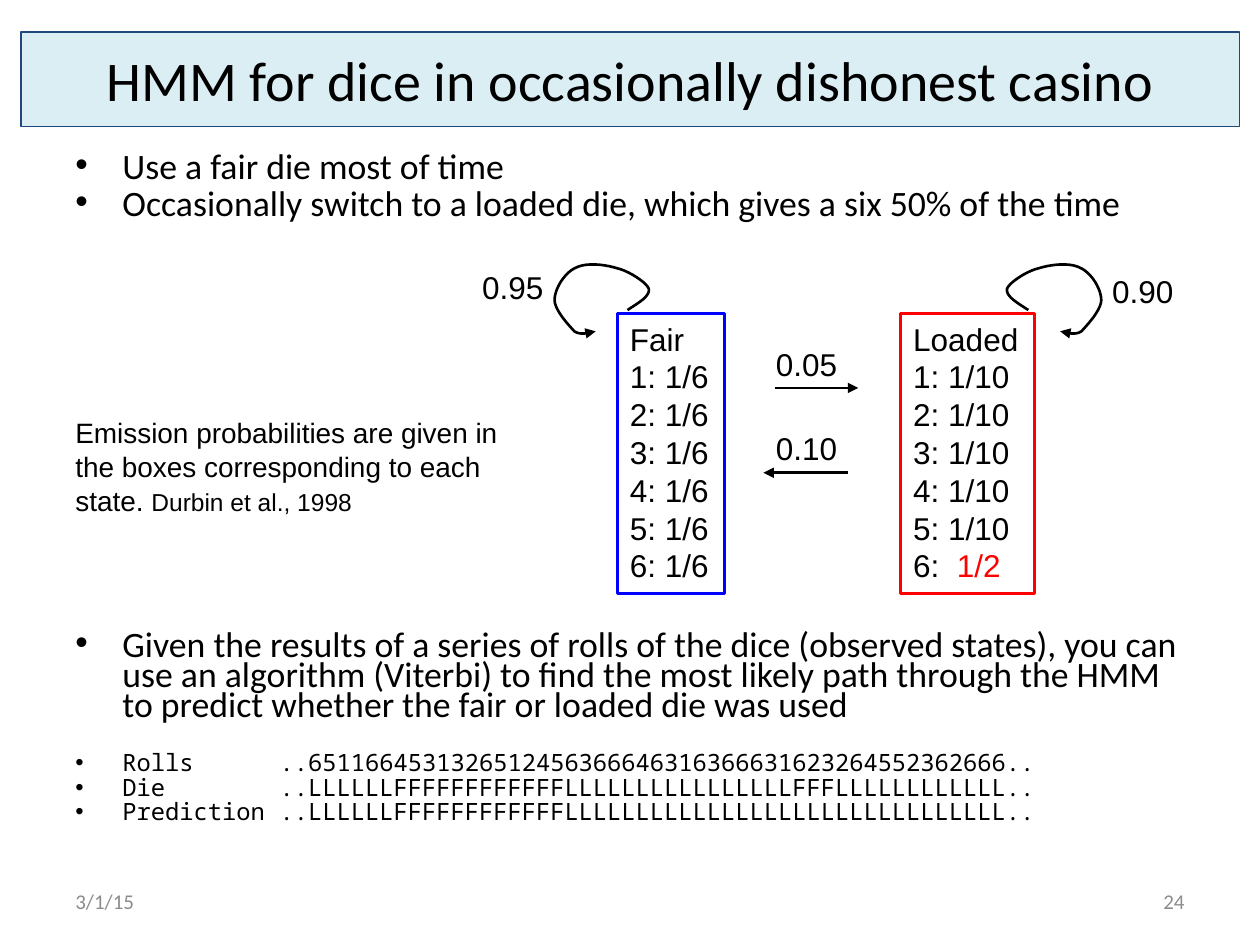
import pptx
import pptx.dml.color
import pptx.enum.text
import pptx.util
from lxml import etree
from pptx.enum.shapes import MSO_CONNECTOR, MSO_SHAPE
from pptx.oxml.ns import qn
from pptx.util import Cm, Pt

ALIGN = pptx.enum.text.PP_ALIGN
ANCHOR = pptx.enum.text.MSO_ANCHOR


def color(value):
    return pptx.dml.color.RGBColor.from_string(value)


def bezier(start, segments, steps=10):
    """Points along a chain of cubic curves, each given as three points."""
    points = [start]
    for first, second, end in segments:
        origin = points[-1]
        for step in range(1, steps + 1):
            t = step / steps
            weights = ((1 - t) ** 3, 3 * t * (1 - t) ** 2, 3 * t * t * (1 - t), t ** 3)
            corners = (origin, first, second, end)
            points.append(tuple(sum(w * c[axis] for w, c in zip(weights, corners))
                                for axis in (0, 1)))
    return points


class Slide:
    ink = "000000"
    sans = "Arial"
    heading = "Calibri"
    mono = "Noto Sans Mono"
    line_width = 1.5

    def __init__(self, page):
        self.page = page
        self.shapes = page.shapes

    def style_span(self, span, size, font, ink=None):
        span.font.size = Pt(size)
        span.font.name = font
        span.font.color.rgb = color(ink or self.ink)

    def set_lines(self, frame, lines, size, font=None, ink=None, align=ALIGN.LEFT):
        frame.text = "\n".join(lines)
        for para in frame.paragraphs:
            para.alignment = align
            for span in para.runs:
                self.style_span(span, size, font or self.sans, ink)

    def title(self, text, left, top, width, height):
        box = self.shapes.title
        box.left, box.top, box.width, box.height = map(Cm, (left, top, width, height))
        box.fill.solid()
        box.fill.fore_color.rgb = color("DBEEF4")
        box.line.color.rgb = color("1F497D")
        box.line.width = Pt(1)
        box.text_frame.vertical_anchor = ANCHOR.MIDDLE
        self.set_lines(box.text_frame, [text], 32, self.heading, align=ALIGN.CENTER)

    def text(self, lines, left, top, width, height, size, wrap=True,
             anchor=ANCHOR.TOP, **style):
        box = self.shapes.add_textbox(Cm(left), Cm(top), Cm(width), Cm(height))
        box.text_frame.word_wrap = wrap
        box.text_frame.vertical_anchor = anchor
        self.set_lines(box.text_frame, lines, size, **style)
        return box.text_frame

    def bullets(self, lines, top, height, size, font, spacing, before=0, tab=None):
        frame = self.text(lines, 1.27, top, 22.86, height, size, font=font)
        for para in frame.paragraphs:
            para.line_spacing = spacing
            para.space_before = Pt(before)
            properties = para._p.get_or_add_pPr()
            properties.set("marL", str(Cm(0.95)))
            properties.set("indent", str(-Cm(0.95)))
            etree.SubElement(properties, qn("a:buFont"), typeface=self.sans)
            etree.SubElement(properties, qn("a:buChar"), char="•")
            if tab:
                stops = etree.SubElement(properties, qn("a:tabLst"))
                etree.SubElement(stops, qn("a:tab"), pos=str(Cm(tab)), algn="l")

    def state(self, lines, left, width, outline):
        box = self.shapes.add_shape(MSO_SHAPE.RECTANGLE, Cm(left), Cm(6.32),
                                    Cm(width), Cm(5.64))
        box.shadow.inherit = False
        box.fill.background()
        box.line.color.rgb = color(outline)
        box.line.width = Pt(self.line_width)
        box.text_frame.word_wrap = False
        box.text_frame.vertical_anchor = ANCHOR.TOP
        self.set_lines(box.text_frame, lines, 18)
        return box.text_frame

    def arrow_line(self, shape):
        shape.line.color.rgb = color(self.ink)
        shape.line.width = Pt(self.line_width)
        outline = shape._element.spPr.find(qn("a:ln"))
        etree.SubElement(outline, qn("a:tailEnd"), type="triangle")

    def arrow(self, start, end, y):
        line = self.shapes.add_connector(MSO_CONNECTOR.STRAIGHT, Cm(start), Cm(y),
                                         Cm(end), Cm(y))
        self.arrow_line(line)
        etree.SubElement(line._element.spPr, qn("a:effectLst"))

    def loop(self, points):
        points = [(Cm(x), Cm(y)) for x, y in points]
        builder = self.shapes.build_freeform(*points[0])
        builder.add_line_segments(points[1:], close=False)
        curve = builder.convert_to_shape()
        curve.shadow.inherit = False
        curve.fill.background()
        self.arrow_line(curve)


def main():
    deck = pptx.Presentation()
    deck.slide_width, deck.slide_height = Cm(25.4), Cm(19.05)
    slide = Slide(deck.slides.add_slide(deck.slide_layouts[5]))

    # Title and bullets
    slide.title("HMM for dice in occasionally dishonest casino", 0.43, 0.64, 24.56, 1.91)
    slide.bullets(["Use a fair die most of time",
                   "Occasionally switch to a loaded die, which gives a six 50% of the time"],
                  3.02, 1.8, 20.4, slide.heading, 0.7, before=4)
    slide.bullets(["Given the results of a series of rolls of the dice (observed states), "
                   "you can use an algorithm (Viterbi) to find the most likely path through "
                   "the HMM to predict whether the fair or loaded die was used"],
                  12.65, 2.2, 20.4, slide.heading, 0.7, before=4)

    # Observed rolls and hidden states
    slide.bullets(["Rolls\t..6511664531326512456366646316366631623264552362666..",
                   "Die\t..LLLLLLFFFFFFFFFFFFLLLLLLLLLLLLLLLLFFFLLLLLLLLLLLL..",
                   "Prediction\t..LLLLLLFFFFFFFFFFFFLLLLLLLLLLLLLLLLLLLLLLLLLLLLLLL.."],
                  15.04, 1.8, 13.6, slide.mono, Pt(14), tab=4.12)

    # Remark on emissions
    remark = slide.text(["Emission probabilities are given in the boxes corresponding "
                         "to each state. "], 1.27, 8.26, 9.32, 2.31, 16)
    citation = remark.paragraphs[0].add_run()
    citation.text = "Durbin et al., 1998"
    slide.style_span(citation, 14, slide.sans)

    # States with their emission probabilities
    slide.state(["Fair"] + [f"{face}: 1/6" for face in range(1, 7)], 12.45, 2.16, "0000FF")
    loaded = slide.state(["Loaded"] + [f"{face}: 1/10" for face in range(1, 6)] + ["6:  "],
                         18.16, 2.69, "FF0000")
    six = loaded.paragraphs[-1].add_run()
    six.text = "1/2"
    slide.style_span(six, 18, slide.sans, "FF0000")

    # Loops: the loaded one mirrors the fair one
    fair_loop = bezier((12.65, 6.25), [
        ((12.88, 6.1), (13.11, 5.97), (13.08, 5.82)),
        ((13.03, 5.69), (12.67, 5.46), (12.45, 5.41)),
        ((12.19, 5.33), (11.81, 5.28), (11.58, 5.41)),
        ((11.38, 5.51), (11.18, 5.82), (11.18, 6.05)),
        ((11.18, 6.25), (11.46, 6.55), (11.58, 6.68)),
        ((11.73, 6.78), (11.94, 6.68), (12.01, 6.68))])
    slide.loop(fair_loop)
    slide.loop([(33.38 - x, y) for x, y in fair_loop])

    # Transitions
    slide.arrow(15.62, 17.3, 7.82)
    slide.arrow(17.09, 15.39, 9.53)
    for value, left, top in (("0.95", 9.47, 5.28), ("0.90", 22.17, 5.36),
                             ("0.05", 15.39, 6.83), ("0.10", 15.39, 8.53)):
        slide.text([value], left, top, 1.75, 1.02, 18, wrap=False)

    # Footer
    for value, left, align in (("3/1/15", 1.27, ALIGN.LEFT), ("24", 18.21, ALIGN.RIGHT)):
        slide.text([value], left, 17.65, 5.92, 1.02, 12, anchor=ANCHOR.MIDDLE,
                   font=slide.heading, ink="8C8C8C", align=align)

    deck.save("out.pptx")


if __name__ == "__main__":
    main()
